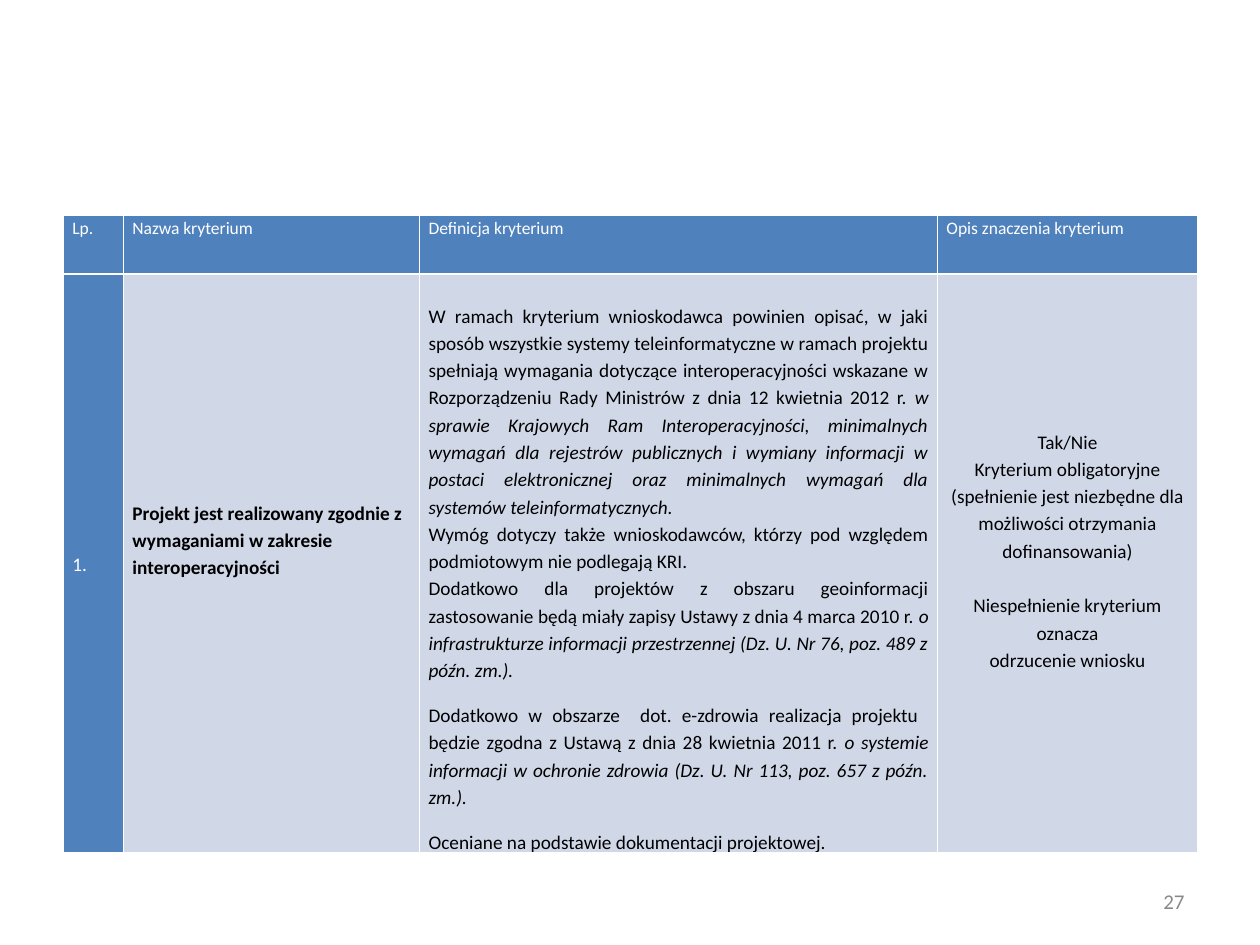
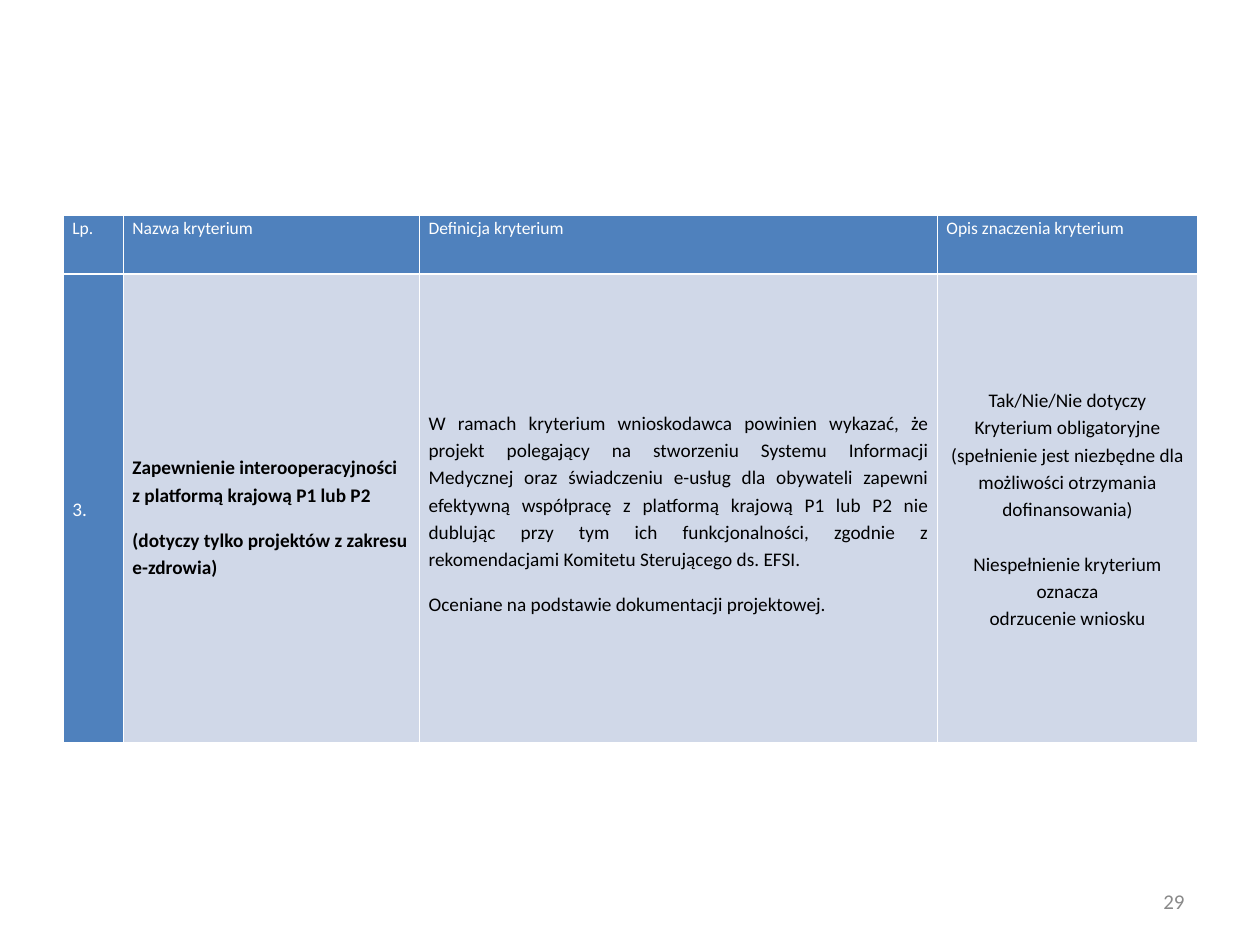
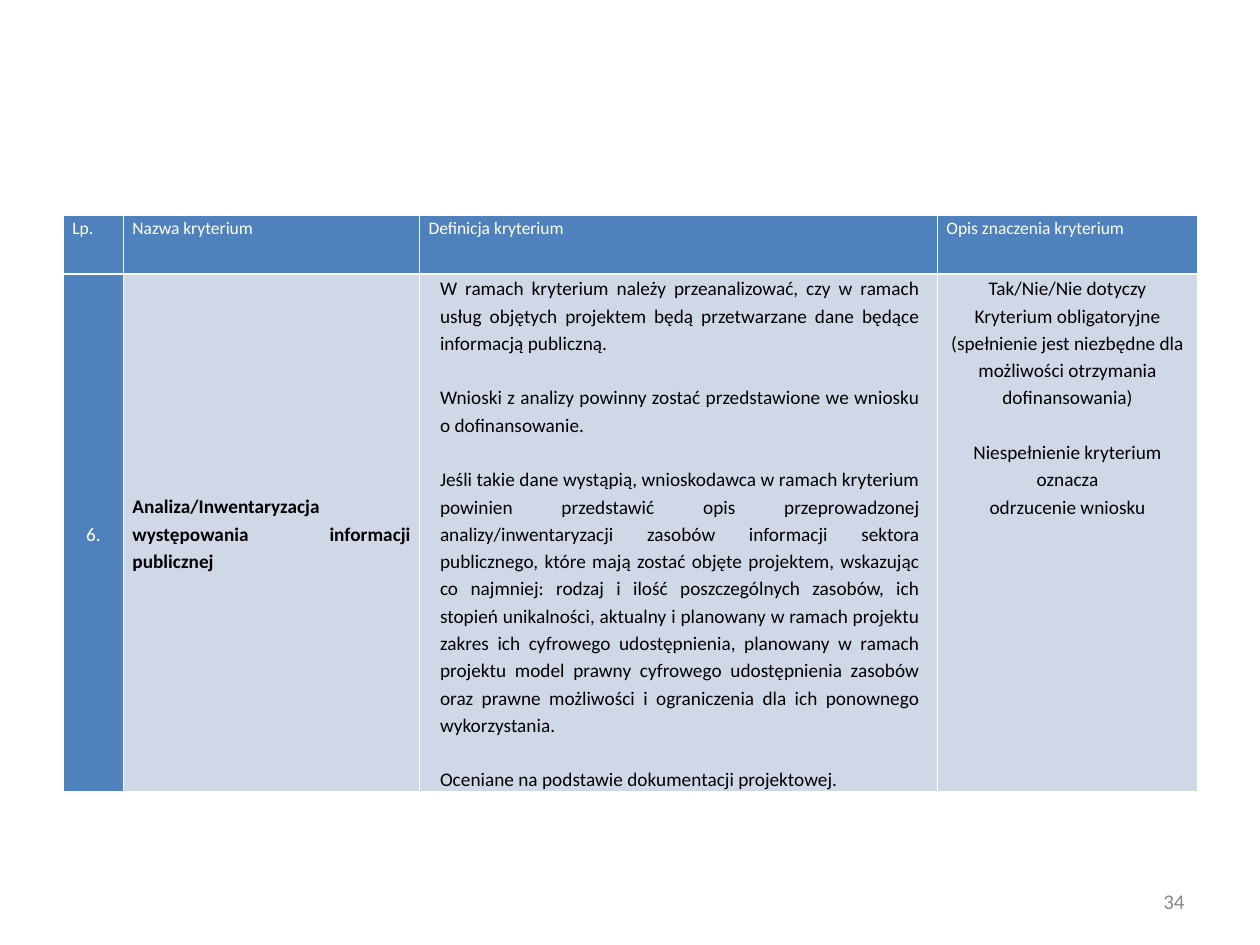
from lxml import etree
from pptx import Presentation
from pptx.dml.color import RGBColor
from pptx.enum.text import MSO_ANCHOR as ANCHOR, PP_ALIGN as ALIGN
from pptx.oxml.ns import qn
from pptx.util import Cm, Pt

FONT = "Calibri"
BLUE = RGBColor(0x4F, 0x81, 0xBD)
PALE_BLUE = RGBColor(0xD0, 0xD8, 0xE8)
GREY = RGBColor(0x89, 0x89, 0x89)
BLACK = RGBColor(0, 0, 0)
WHITE = RGBColor(0xFF, 0xFF, 0xFF)

HEADINGS = ["Lp.", "Nazwa kryterium", "Definicja kryterium", "Opis znaczenia kryterium"]
COLUMN_WIDTHS = [1.21, 5.97, 10.44, 5.24]
HEADER_HEIGHT = 1.19
SIDE_MARGIN = 0.18
GAP = 10        # points between paragraphs
BLANK_LINE = 15.6  # points, the height of one line of body text
ASSESSMENT = "Oceniane na podstawie dokumentacji projektowej."

# A paragraph is (upright text, italic text, space after in points).
# Cell margins are given in cm.
CRITERIA = [
    {
        "page": "27", "number": "1.", "height": 11.68, "answer": "Tak/Nie",
        "name": [("Projekt jest realizowany zgodnie z wymaganiami w zakresie "
                  "interoperacyjności", "", 0)],
        "name_layout": {"margin_top": 4.52},
        "definition": [
            ("W ramach kryterium wnioskodawca powinien opisać, w jaki sposób wszystkie "
             "systemy teleinformatyczne w ramach projektu spełniają wymagania dotyczące "
             "interoperacyjności wskazane w Rozporządzeniu Rady Ministrów z dnia "
             "12 kwietnia 2012 r. ",
             "w sprawie Krajowych Ram Interoperacyjności, minimalnych wymagań dla "
             "rejestrów publicznych i wymiany informacji w postaci elektronicznej oraz "
             "minimalnych wymagań dla systemów teleinformatycznych.", 0),
            ("Wymóg dotyczy także wnioskodawców, którzy pod względem podmiotowym nie "
             "podlegają KRI.", "", 0),
            ("Dodatkowo dla projektów z obszaru geoinformacji zastosowanie będą miały "
             "zapisy Ustawy z dnia 4 marca 2010 r. ",
             "o infrastrukturze informacji przestrzennej (Dz. U. Nr 76, poz. 489 z późn. "
             "zm.).", GAP),
            ("Dodatkowo w obszarze  dot. e-zdrowia realizacja projektu  będzie zgodna z "
             "Ustawą z dnia 28 kwietnia 2011 r. ",
             "o systemie informacji w ochronie zdrowia (Dz. U. Nr 113, poz. 657 z późn. "
             "zm.).", GAP),
            (ASSESSMENT, "", 0),
        ],
        "definition_layout": {"margin_top": 0.55},
        "meaning_layout": {"anchor": ANCHOR.MIDDLE, "margin_bottom": 0.55},
        "number_align": ALIGN.LEFT, "name_align": ALIGN.LEFT,
    },
    {
        "page": "29", "number": "3.", "height": 9.45, "answer": "Tak/Nie/Nie dotyczy",
        "name": [("Zapewnienie interooperacyjności\nz platformą krajową P1 lub P2", "", GAP),
                 ("(dotyczy tylko projektów z zakresu e-zdrowia)", "", 0)],
        "name_layout": {"margin_top": 3.61},
        "definition": [
            ("W ramach kryterium wnioskodawca powinien wykazać, że projekt polegający na "
             "stworzeniu Systemu Informacji Medycznej oraz świadczeniu e-usług dla "
             "obywateli zapewni efektywną współpracę z platformą krajową P1 lub P2 nie "
             "dublując przy tym ich funkcjonalności, zgodnie z rekomendacjami Komitetu "
             "Sterującego ds. EFSI.", "", GAP),
            (ASSESSMENT, "", 0),
        ],
        "definition_layout": {"margin_top": 2.71},
        "meaning_layout": {"anchor": ANCHOR.MIDDLE},
        "number_align": ALIGN.LEFT, "name_align": ALIGN.LEFT,
    },
    {
        "page": "34", "number": "6.", "height": 10.44, "answer": "Tak/Nie/Nie dotyczy",
        "name": [("Analiza/Inwentaryzacja występowania informacji publicznej", "", 0)],
        "name_layout": {"anchor": ANCHOR.MIDDLE},
        "definition": [
            ("W ramach kryterium należy przeanalizować, czy w ramach usług objętych "
             "projektem będą przetwarzane dane będące informacją publiczną.", "",
             BLANK_LINE),
            ("Wnioski z analizy powinny zostać przedstawione we wniosku o "
             "dofinansowanie.", "", BLANK_LINE),
            ("Jeśli takie dane wystąpią, wnioskodawca w ramach kryterium powinien "
             "przedstawić opis przeprowadzonej analizy/inwentaryzacji zasobów informacji "
             "sektora publicznego, które mają zostać objęte projektem, wskazując co "
             "najmniej: rodzaj i ilość poszczególnych zasobów, ich stopień unikalności, "
             "aktualny i planowany w ramach projektu zakres ich cyfrowego udostępnienia, "
             "planowany w ramach projektu model prawny cyfrowego udostępnienia zasobów "
             "oraz prawne możliwości i ograniczenia dla ich ponownego wykorzystania.", "",
             BLANK_LINE),
            (ASSESSMENT, "", 0),
        ],
        "definition_layout": {"margin_left": 0.41, "margin_right": 0.36},
        "meaning_layout": {},
        "number_align": ALIGN.CENTER, "name_align": ALIGN.JUSTIFY,
    },
]


def style_cell(cell, fill, anchor=ANCHOR.TOP, margin_left=SIDE_MARGIN,
               margin_right=SIDE_MARGIN, margin_top=0, margin_bottom=0):
    """Set the white borders, fill, anchor and margins (cm) of a cell."""
    cell.vertical_anchor = anchor
    cell.margin_left, cell.margin_right = Cm(margin_left), Cm(margin_right)
    cell.margin_top, cell.margin_bottom = Cm(margin_top), Cm(margin_bottom)
    properties = cell._tc.get_or_add_tcPr()
    for side in ("a:lnL", "a:lnR", "a:lnT", "a:lnB"):
        line = etree.SubElement(properties, qn(side), w=str(Pt(1)))
        line_fill = etree.SubElement(line, qn("a:solidFill"))
        etree.SubElement(line_fill, qn("a:srgbClr"), val=str(WHITE))
    cell.fill.solid()
    cell.fill.fore_color.rgb = fill


def write_paragraphs(text_frame, paragraphs, size, color, align, bold=False, spacing=1.15):
    for index, (upright, italic, space_after) in enumerate(paragraphs):
        paragraph = text_frame.add_paragraph() if index else text_frame.paragraphs[0]
        paragraph.text = upright
        if italic:
            run = paragraph.add_run()
            run.text = italic
            run.font.italic = True
        paragraph.alignment = align
        paragraph.line_spacing = spacing
        paragraph.space_before = Pt(0)
        paragraph.space_after = Pt(space_after)
        for run in paragraph.runs:
            run.font.name = FONT
            run.font.size = Pt(size)
            run.font.bold = bold
            run.font.color.rgb = color


presentation = Presentation()
presentation.slide_width, presentation.slide_height = Cm(25.4), Cm(19.05)

for criterion in CRITERIA:
    slide = presentation.slides.add_slide(presentation.slide_layouts[6])

    page_number = slide.shapes.add_textbox(Cm(18.2), Cm(17.66), Cm(5.93), Cm(1.01))
    page_number.text_frame.word_wrap = True
    page_number.text_frame.vertical_anchor = ANCHOR.MIDDLE
    write_paragraphs(page_number.text_frame, [(criterion["page"], "", 0)], 12, GREY,
                     ALIGN.RIGHT, spacing=1.0)

    table = slide.shapes.add_table(
        2, len(HEADINGS), Cm(1.28), Cm(4.33), Cm(sum(COLUMN_WIDTHS)),
        Cm(HEADER_HEIGHT + criterion["height"])).table
    table.rows[0].height = Cm(HEADER_HEIGHT)
    table.rows[1].height = Cm(criterion["height"])
    for column, width in zip(table.columns, COLUMN_WIDTHS):
        column.width = Cm(width)

    for cell, heading in zip(table.rows[0].cells, HEADINGS):
        style_cell(cell, BLUE)
        write_paragraphs(cell.text_frame, [(heading, "", 0)], 10, WHITE, ALIGN.LEFT)

    meaning = [
        (criterion["answer"], "", 0),
        ("Kryterium obligatoryjne", "", 0),
        ("(spełnienie jest niezbędne dla możliwości otrzymania dofinansowania)", "",
         BLANK_LINE),
        ("Niespełnienie kryterium oznacza", "", 0),
        ("odrzucenie wniosku", "", 0),
    ]
    body = [
        ([(criterion["number"], "", 0)], {"anchor": ANCHOR.MIDDLE}, BLUE, WHITE,
         criterion["number_align"], False),
        (criterion["name"], criterion["name_layout"], PALE_BLUE, BLACK,
         criterion["name_align"], True),
        (criterion["definition"], criterion["definition_layout"], PALE_BLUE, BLACK,
         ALIGN.JUSTIFY, False),
        (meaning, criterion["meaning_layout"], PALE_BLUE, BLACK, ALIGN.CENTER, False),
    ]
    for cell, (paragraphs, layout, fill, color, align, bold) in zip(table.rows[1].cells, body):
        style_cell(cell, fill, **layout)
        write_paragraphs(cell.text_frame, paragraphs, 11, color, align, bold)

presentation.save("out.pptx")
